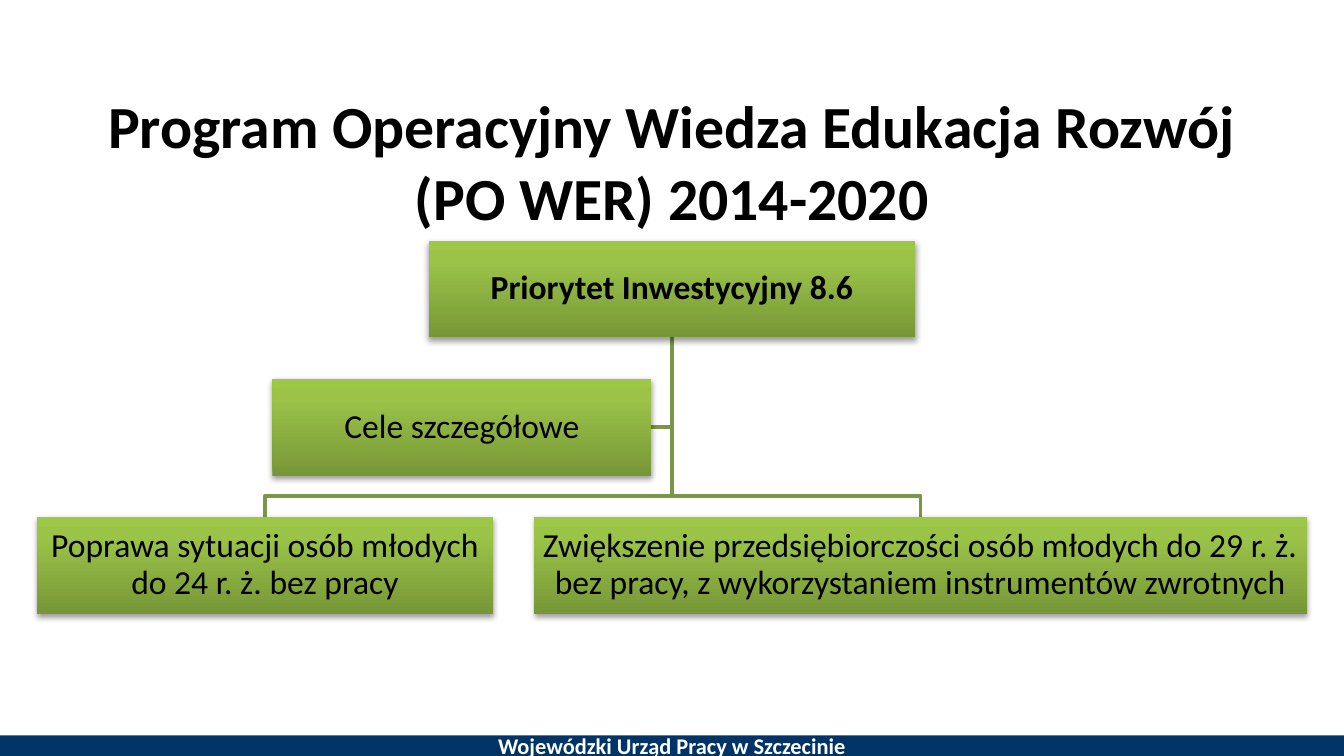
from dataclasses import dataclass

from lxml.etree import SubElement
from pptx import Presentation
from pptx.dml.color import RGBColor
from pptx.enum.shapes import MSO_SHAPE
from pptx.enum.text import MSO_ANCHOR, PP_ALIGN
from pptx.oxml.ns import qn
from pptx.util import Cm, Pt


@dataclass(frozen=True)
class Theme:
    font: str = "Calibri"
    ink: str = "000000"
    paper: str = "FFFFFF"
    navy: str = "003366"
    branch: str = "7C9647"
    gradient: tuple = ((0, "779737"), (80, "9BC348"), (100, "9DC746"))
    title_size: int = 32
    box_size: int = 18
    footer_size: int = 12
    branch_width: int = 2


def write(tf, text, *, size, font, color, bold=False, anchor=MSO_ANCHOR.MIDDLE,
          inset=None, wrap=True, spacing=None):
    tf.word_wrap = wrap
    tf.vertical_anchor = anchor
    if inset is not None:
        tf.margin_left = tf.margin_right = tf.margin_top = tf.margin_bottom = Cm(inset)
    p = tf.paragraphs[0]
    p.alignment = PP_ALIGN.CENTER
    if spacing:
        p.line_spacing = spacing
    r = p.add_run()
    r.text = text
    r.font.name = font
    r.font.size = Pt(size)
    r.font.bold = bold
    r.font.color.rgb = RGBColor.from_string(color)


class SlideBuilder:
    def __init__(self, slide, theme):
        self.s = slide
        self.theme = theme

    def title(self, text, x, y, w, h):
        sp = self.s.shapes.title
        sp.left, sp.top, sp.width, sp.height = Cm(x), Cm(y), Cm(w), Cm(h)
        write(sp.text_frame, text, size=self.theme.title_size, font=self.theme.font,
              color=self.theme.ink, bold=True, anchor=MSO_ANCHOR.TOP)

    def rect(self, x, y, w, h):
        sp = self.s.shapes.add_shape(MSO_SHAPE.RECTANGLE, Cm(x), Cm(y), Cm(w), Cm(h))
        sp.line.fill.background()
        sp.shadow.inherit = False
        return sp

    def footer(self, text, x, y, w, h):
        sp = self.rect(x, y, w, h)
        sp.fill.solid()
        sp.fill.fore_color.rgb = RGBColor.from_string(self.theme.navy)
        write(sp.text_frame, text, size=self.theme.footer_size, font=self.theme.font,
              color=self.theme.paper, bold=True, wrap=False)

    def box(self, text, x, y, w, h, bold=False):
        sp = self.rect(x, y, w, h)
        self.shade(sp)
        self.cast_shadow(sp)
        write(sp.text_frame, text, size=self.theme.box_size, font=self.theme.font,
              color=self.theme.ink, bold=bold, inset=0.03, spacing=0.9)

    def shade(self, sp):
        """Fill with the theme's three-stop gradient, running upwards."""
        sp.fill.gradient()
        sp.fill.gradient_angle = 90
        stops = sp._element.spPr.find(".//" + qn("a:gsLst"))
        for gs in list(stops):
            stops.remove(gs)
        for pos, color in self.theme.gradient:
            gs = SubElement(stops, qn("a:gs"), pos=str(pos * 1000))
            SubElement(gs, qn("a:srgbClr"), val=color)

    def cast_shadow(self, sp):
        effects = sp._element.spPr.find(qn("a:effectLst"))
        shadow = SubElement(effects, qn("a:outerShdw"), blurRad=str(Pt(3.1)),
                            dist=str(Pt(1.6)), dir="5400000", rotWithShape="0")
        color = SubElement(shadow, qn("a:srgbClr"), val=self.theme.ink)
        SubElement(color, qn("a:alpha"), val="38000")

    def branch(self, *points):
        start, *rest = [(Cm(x), Cm(y)) for x, y in points]
        builder = self.s.shapes.build_freeform(*start)
        builder.add_line_segments(rest, close=False)
        sp = builder.convert_to_shape()
        sp.shadow.inherit = False
        sp.fill.background()
        sp.line.color.rgb = RGBColor.from_string(self.theme.branch)
        sp.line.width = Pt(self.theme.branch_width)


def main():
    width, height = 25.4, 14.29
    prs = Presentation()
    prs.slide_width, prs.slide_height = Cm(width), Cm(height)
    b = SlideBuilder(prs.slides.add_slide(prs.slide_layouts[5]), Theme())

    b.footer("Wojewódzki Urząd Pracy w Szczecinie", 0, 13.9, width, 0.39)
    b.title("Program Operacyjny Wiedza Edukacja Rozwój (PO WER) 2014-2020",
            1.27, 1.55, width - 2 * 1.27, 1.8)

    box_h, gap = 1.83, 0.78
    root_y, aside_y, goal_y = [4.55 + i * (box_h + gap) for i in range(3)]
    center = width / 2
    root_w = 9.2
    aside_x, aside_w = 5.15, 7.16
    goals = [
        ("Poprawa sytuacji osób młodych do 24 r. ż. bez pracy", 0.7, 8.62),
        ("Zwiększenie przedsiębiorczości osób młodych do 29 r. ż. bez pracy, "
         "z wykorzystaniem instrumentów zwrotnych", 10.09, 14.61),
    ]

    trunk = (center, root_y + box_h)
    aside_mid = aside_y + box_h / 2
    bus_y = goal_y - gap / 2
    b.branch(trunk, (center, aside_mid), (aside_x + aside_w, aside_mid))
    for _, x, w in goals:
        mid = x + w / 2
        b.branch(trunk, (center, bus_y), (mid, bus_y), (mid, goal_y))

    b.box("Priorytet Inwestycyjny 8.6", center - root_w / 2, root_y, root_w, box_h,
          bold=True)
    b.box("Cele szczegółowe", aside_x, aside_y, aside_w, box_h)
    for text, x, w in goals:
        b.box(text, x, goal_y, w, box_h)

    prs.save("out.pptx")


if __name__ == "__main__":
    main()
